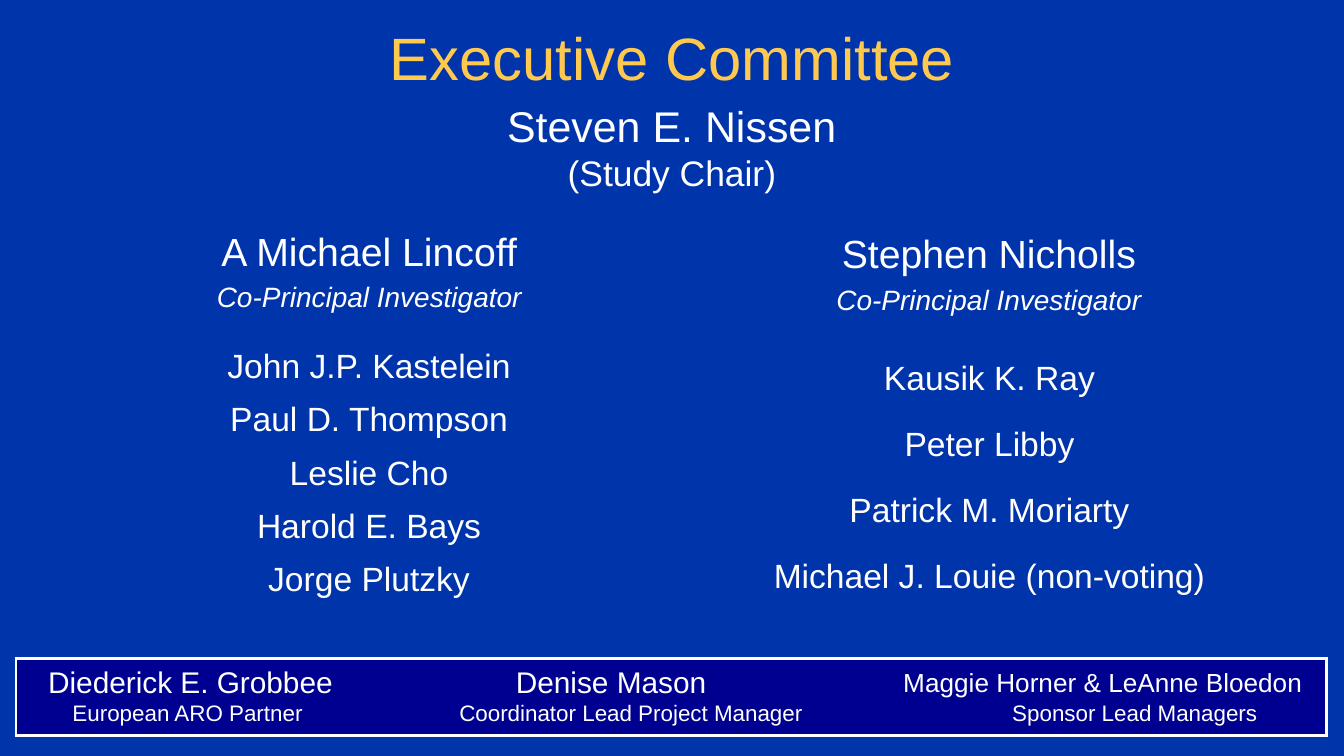
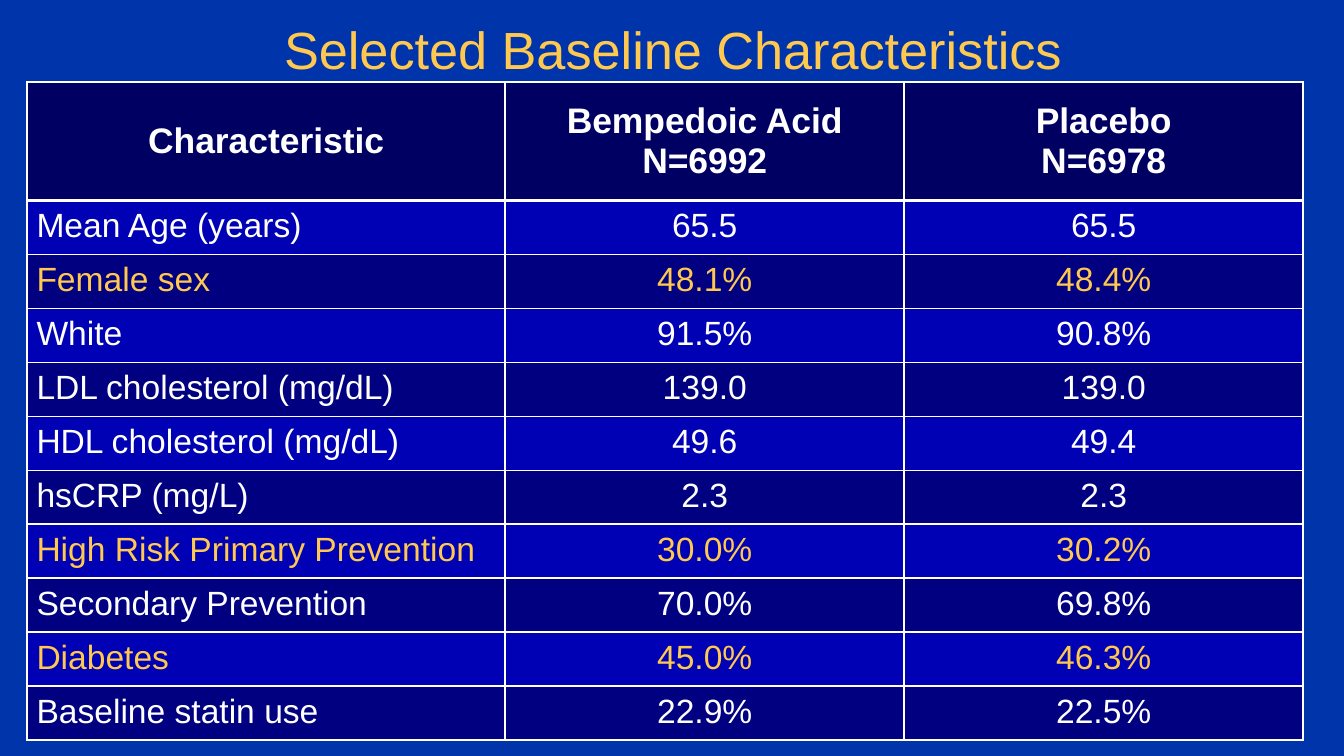
from dataclasses import dataclass

from lxml import etree
from pptx import Presentation
from pptx import util as u
from pptx.dml.color import RGBColor
from pptx.enum import text as t
from pptx.oxml.ns import qn

CENTER, LEFT = t.PP_ALIGN.CENTER, t.PP_ALIGN.LEFT


@dataclass(frozen=True)
class Theme:
    font: str = "Arial"
    back: str = "0034AA"
    white: str = "FFFFFF"
    gold: str = "FFC84F"
    foot: str = "000090"
    head: str = "000063"
    bands: tuple = ("0000B4", "000080")
    chair: int = 23
    sub: int = 19
    lead: int = 21
    role: int = 15
    name: int = 18
    top: int = 19
    thin: float = 1
    thick: float = 1.5


TH = Theme()

LEADS = (
    ("A Michael Lincoff", (4.06, 4.01, 5.84, 1.88)),
    ("Stephen Nicholls", (15.77, 4.06, 5.84, 1.88)),
)
MEMBERS = (
    (("John J.P. Kastelein", "Paul D. Thompson", "Leslie Cho",
      "Harold E. Bays", "Jorge Plutzky"),
     (4.27, 6.27, 5.41, 5.11), 28.6),
    (("Kausik K. Ray", "Peter Libby", "Patrick M. Moriarty",
      "Michael J. Louie (non-voting)"),
     (14.6, 6.25, 8.2, 5), 35.4),
)
# Each partner cell: text, size, left margin, top margin
PARTNERS = (
    (("Diederick E. Grobbee", 16, 0.61, 0.15),
     ("Denise Mason", 16, 2.26, 0.15),
     ("Maggie Horner & LeAnne Bloedon", 14, 0.89, 0.2)),
    (("European ARO Partner", 12, 1.07, 0),
     ("Coordinator Lead Project Manager", 12, 1.19, 0),
     ("Sponsor Lead Managers", 12, 2.95, 0)),
)
HEADS = ("Characteristic", "Bempedoic Acid\vN=6992", "Placebo\vN=6978")
TRAITS = (
    ("Mean Age (years)", "65.5", "65.5"),
    ("Female sex", "48.1%", "48.4%"),
    ("White", "91.5%", "90.8%"),
    ("LDL cholesterol (mg/dL)", "139.0", "139.0"),
    ("HDL cholesterol (mg/dL)", "49.6", "49.4"),
    ("hsCRP (mg/L)", "2.3", "2.3"),
    ("High Risk Primary Prevention", "30.0%", "30.2%"),
    ("Secondary Prevention", "70.0%", "69.8%"),
    ("Diabetes", "45.0%", "46.3%"),
    ("Baseline statin use", "22.9%", "22.5%"),
)
KEY = {"Female sex", "High Risk Primary Prevention", "Diabetes"}


def rgb(code):
    return RGBColor.from_string(code)


def style(para, size, color=TH.white, align=CENTER, bold=False, slant=False):
    para.alignment = align
    para.space_before = u.Pt(0)
    for run in para.runs:
        font = run.font
        font.name, font.size = TH.font, u.Pt(size)
        font.bold, font.italic = bold, slant
        font.color.rgb = rgb(color)


def place(shape, box, inset=0):
    """Move a shape to box (cm) and clear its margins but for the top."""
    shape.left, shape.top, shape.width, shape.height = map(u.Cm, box)
    frame = shape.text_frame
    frame.word_wrap = True
    frame.auto_size = t.MSO_AUTO_SIZE.NONE
    frame.vertical_anchor = t.MSO_ANCHOR.TOP
    frame.margin_left = frame.margin_right = frame.margin_bottom = 0
    frame.margin_top = u.Cm(inset)
    return frame


def plain(para):
    """Drop the bullet and the hanging indent of the layout."""
    props = para._p.get_or_add_pPr()
    props.set("marL", "0")
    props.set("indent", "0")
    etree.SubElement(props, qn("a:buNone"))


def title(slide, words, box, size):
    frame = place(slide.shapes.title, box, 0.15)
    frame.text = words
    style(frame.paragraphs[0], size, TH.gold)


def pair(shape, box, inset, name, role, sizes, gap=0, slant=False):
    """A name with the role under it."""
    frame = place(shape, box, inset)
    frame.text = f"{name}\n{role}"
    first, last = frame.paragraphs
    for para in (first, last):
        plain(para)
    style(first, sizes[0])
    style(last, sizes[1], slant=slant)
    last.space_before = u.Pt(gap)


def roll(shape, names, box, pitch):
    """A list of names set at a fixed line pitch in points."""
    frame = place(shape, box)
    frame.text = "\n".join(names)
    for para in frame.paragraphs:
        plain(para)
        style(para, TH.name)
        para.line_spacing = u.Pt(pitch)


def grid(slide, spot, cols, rows):
    shape = slide.shapes.add_table(
        len(rows), len(cols), *map(u.Cm, (*spot, sum(cols), sum(rows))))
    table = shape.table
    for col, width in zip(table.columns, cols):
        col.width = u.Cm(width)
    for row, height in zip(table.rows, rows):
        row.height = u.Cm(height)
    return table


def cell(box, words, fill, edges, left=0, top=0):
    """Fill a cell; edges are left, right, top, bottom widths, 0 for none."""
    box.margin_left, box.margin_top = u.Cm(left), u.Cm(top)
    box.margin_right = box.margin_bottom = 0
    props = box._tc.get_or_add_tcPr()
    for side, width in zip("LRTB", edges):
        line = etree.SubElement(props, qn(f"a:ln{side}"), w=str(u.Pt(width)))
        if width:
            paint = etree.SubElement(line, qn("a:solidFill"))
            etree.SubElement(paint, qn("a:srgbClr"), val=TH.white)
        else:
            etree.SubElement(line, qn("a:noFill"))
    box.fill.solid()
    box.fill.fore_color.rgb = rgb(fill)
    box.text_frame.text = words
    return box.text_frame.paragraphs[0]


def strip(slide):
    """The framed band of partners at the foot."""
    table = grid(slide, (0.3, 12.45), (7.19, 8.69, 8.89), (0.81, 0.64))
    for r, row in enumerate(PARTNERS):
        for c, (words, size, left, top) in enumerate(row):
            edges = [TH.thick * on for on in (c == 0, c == 2, r == 0, r == 1)]
            para = cell(table.cell(r, c), words, TH.foot, edges, left, top)
            style(para, size, align=LEFT)


def traits(slide):
    table = grid(slide, (0.51, 1.55), (9.04, 7.54, 7.54),
                 (2.24, *[1.02] * len(TRAITS)))
    thin, thick = TH.thin, TH.thick
    for c, words in enumerate(HEADS):
        box = table.cell(0, c)
        para = cell(box, words, TH.head, (thin, thin, thin, thick))
        box.vertical_anchor = t.MSO_ANCHOR.MIDDLE
        style(para, TH.top, bold=True)
    for r, row in enumerate(TRAITS, 1):
        color = TH.gold if row[0] in KEY else TH.white
        edges = (thin, thin, thick if r == 1 else thin, thin)
        for c, words in enumerate(row):
            para = cell(table.cell(r, c), words, TH.bands[(r - 1) % 2],
                        edges, 0 if c else 0.18, 0.13)
            style(para, TH.name, color, CENTER if c else LEFT)


def board(deck):
    slide = deck.slides.add_slide(deck.slide_layouts.get_by_name("Comparison"))
    title(slide, "Executive Committee", (7.34, 0.25, 10.74, 1.42), 32)
    chair = slide.shapes.add_textbox(0, 0, 0, 0)
    pair(chair, (9.55, 1.75, 6.3, 1.85), 0.13, "Steven E. Nissen",
         "(Study Chair)", (TH.chair, TH.sub))
    hold = {p.placeholder_format.idx: p for p in slide.placeholders}
    for idx, (name, box) in zip((1, 3), LEADS):
        pair(hold[idx], box, 0.28, name, "Co-Principal Investigator",
             (TH.lead, TH.role), 3.2, True)
    for idx, (names, box, pitch) in zip((2, 4), MEMBERS):
        roll(hold[idx], names, box, pitch)
    strip(slide)


def basics(deck):
    slide = deck.slides.add_slide(deck.slide_layouts.get_by_name("Title Only"))
    title(slide, "Selected Baseline Characteristics",
          (5.31, 0.18, 14.81, 1.24), 28)
    traits(slide)


def main():
    deck = Presentation()
    deck.slide_width, deck.slide_height = u.Cm(25.4), u.Cm(14.29)
    fill = deck.slide_master.background.fill
    fill.solid()
    fill.fore_color.rgb = rgb(TH.back)
    board(deck)
    basics(deck)
    deck.save("out.pptx")


if __name__ == "__main__":
    main()
